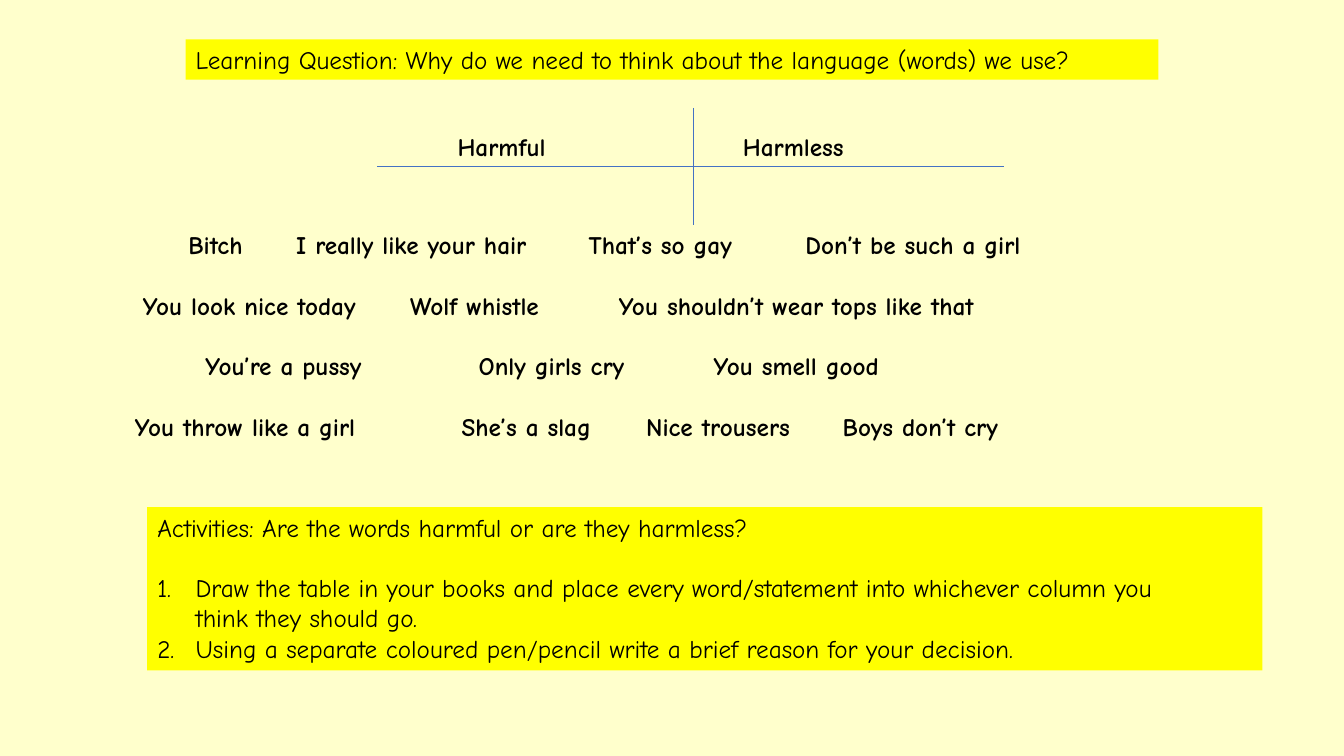
from dataclasses import dataclass

from lxml import etree
from pptx import Presentation
from pptx.dml.color import RGBColor
from pptx.enum.shapes import MSO_CONNECTOR
from pptx.enum.text import MSO_ANCHOR, MSO_AUTO_SIZE, PP_ALIGN
from pptx.oxml.ns import qn
from pptx.util import Inches, Pt

STRAIGHT = MSO_CONNECTOR.STRAIGHT
TOP = MSO_ANCHOR.TOP
NO_AUTOFIT = MSO_AUTO_SIZE.NONE
LEFT = PP_ALIGN.LEFT

QUESTION = "Learning Question: Why do we need to think about the language (words) we use?"
ACTIVITY_HEADING = "Activities: Are the words harmful or are they harmless?"
ACTIVITIES = [
    "Draw the table in your books and place every word/statement into whichever column you"
    "\vthink they should go.",
    "Using a separate coloured pen/pencil write a brief reason for your decision.",
]
# Each entry is its distance from the left of the text, and its wording.
COLUMN_HEADINGS = [[(0.53, "Harmful"), (3.36, "Harmless")]]
STATEMENTS = [
    [(1.16, "Bitch"), (2.23, "I really like your hair"),
     (5.13, "That’s so gay"), (7.28, "Don’t be such a girl")],
    [(0.71, "You look nice today"), (3.36, "Wolf whistle"),
     (5.43, "You shouldn’t wear tops like that")],
    [(1.33, "You’re a pussy"), (4.04, "Only girls cry"), (6.37, "You smell good")],
    [(0.63, "You throw like a girl"), (3.87, "She’s a slag"),
     (5.7, "Nice trousers"), (7.65, "Boys don’t cry")],
]


@dataclass(frozen=True)
class Theme:
    font: str = "Comic Neue"
    size: float = 18
    row_gap: float = 21.6
    line_width: float = 0.5
    list_indent: float = 0.38
    background: RGBColor = RGBColor(0xFF, 0xFF, 0xCC)
    highlight: RGBColor = RGBColor(0xFF, 0xFF, 0x00)
    text: RGBColor = RGBColor(0x00, 0x00, 0x00)
    line: RGBColor = RGBColor(0x44, 0x72, 0xC4)


class SlideBuilder:
    def __init__(self, slide, theme):
        self.slide = slide
        self.theme = theme
        slide.background.fill.solid()
        slide.background.fill.fore_color.rgb = theme.background

    def format_paragraph(self, paragraph, bold=False, gap_before=0):
        paragraph.alignment = LEFT
        paragraph.line_spacing = 1.0
        paragraph.space_before = Pt(gap_before)
        paragraph.space_after = Pt(0)
        for run in paragraph.runs:
            run.font.name = self.theme.font
            run.font.size = Pt(self.theme.size)
            run.font.bold = bold
            run.font.color.rgb = self.theme.text

    def highlight(self, placeholder, left, top, width, height):
        """Move a placeholder and give it the highlighter fill."""
        placeholder.left, placeholder.top = Inches(left), Inches(top)
        placeholder.width, placeholder.height = Inches(width), Inches(height)
        placeholder.fill.solid()
        placeholder.fill.fore_color.rgb = self.theme.highlight
        frame = placeholder.text_frame
        frame.word_wrap = True
        frame.auto_size = NO_AUTOFIT
        frame.vertical_anchor = TOP
        return frame

    def title(self, text, *bounds):
        frame = self.highlight(self.slide.shapes.title, *bounds)
        frame.text = text
        self.format_paragraph(frame.paragraphs[0])

    def numbered_list(self, heading, items, *bounds):
        frame = self.highlight(self.slide.placeholders[1], *bounds)
        frame.text = heading
        paragraph = frame.paragraphs[0]
        self.format_paragraph(paragraph)
        properties = paragraph._p.get_or_add_pPr()
        properties.set("marL", "0")
        properties.set("indent", "0")
        etree.SubElement(properties, qn("a:buNone"))
        indent = Inches(self.theme.list_indent)
        for index, item in enumerate(items):
            paragraph = frame.add_paragraph()
            paragraph.text = item
            self.format_paragraph(paragraph, gap_before=0 if index else self.theme.row_gap)
            properties = paragraph._p.get_or_add_pPr()
            properties.set("marL", str(indent))
            properties.set("indent", str(-indent))
            etree.SubElement(properties, qn("a:buFont"), typeface="+mj-lt")
            etree.SubElement(properties, qn("a:buAutoNum"), type="arabicPeriod")

    def tabbed_rows(self, rows, left, top, width, height):
        """Add bold rows of text with each entry at its own tab stop."""
        box = self.slide.shapes.add_textbox(
            Inches(left), Inches(top), Inches(width), Inches(height))
        frame = box.text_frame
        frame.word_wrap = True
        for index, row in enumerate(rows):
            paragraph = frame.add_paragraph() if index else frame.paragraphs[0]
            paragraph.text = "".join("\t" + text for _, text in row)
            self.format_paragraph(paragraph, bold=True,
                                  gap_before=self.theme.row_gap if index else 0)
            tab_list = etree.SubElement(paragraph._p.get_or_add_pPr(), qn("a:tabLst"))
            for position, _ in row:
                etree.SubElement(tab_list, qn("a:tab"), pos=str(Inches(position)), algn="l")

    def line_group(self, lines):
        group = self.slide.shapes.add_group_shape()
        for line in lines:
            connector = group.shapes.add_connector(STRAIGHT, *map(Inches, line))
            connector.line.color.rgb = self.theme.line
            connector.line.width = Pt(self.theme.line_width)
            etree.SubElement(connector._element.spPr, qn("a:effectLst"))


def main():
    presentation = Presentation()
    presentation.slide_width = Inches(13.33)
    presentation.slide_height = Inches(7.5)
    slide = presentation.slides.add_slide(presentation.slide_layouts[1])
    builder = SlideBuilder(slide, Theme())

    builder.title(QUESTION, 1.84, 0.39, 9.65, 0.4)
    builder.tabbed_rows(COLUMN_HEADINGS, 3.91, 1.25, 5.44, 0.4)
    builder.line_group([(6.88, 1.07, 6.88, 2.23), (3.74, 1.65, 9.96, 1.65)])
    builder.tabbed_rows(STATEMENTS, 0.61, 2.23, 12.53, 2.22)
    builder.numbered_list(ACTIVITY_HEADING, ACTIVITIES, 1.46, 5.03, 11.06, 1.62)

    presentation.save("out.pptx")


if __name__ == "__main__":
    main()
